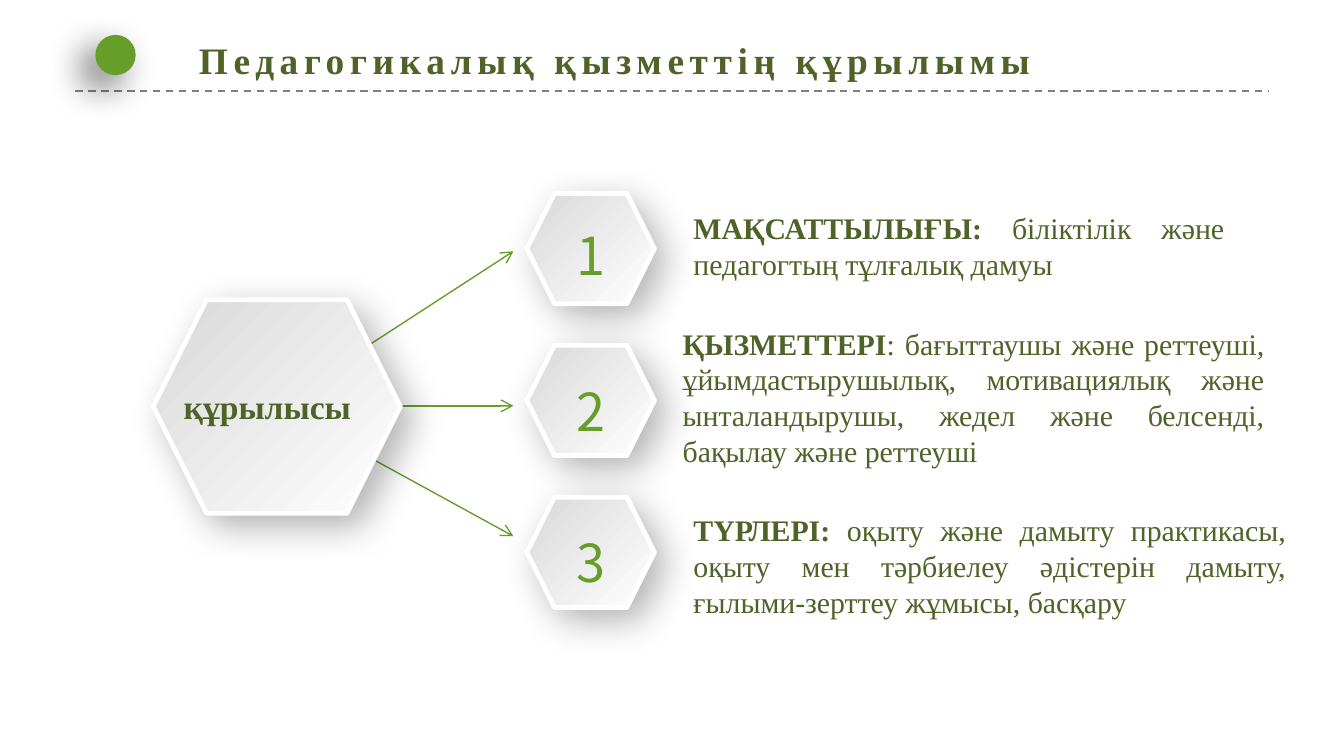
from lxml import etree
from pptx import Presentation, util as u
from pptx.dml.color import RGBColor
from pptx.enum import dml, shapes, text
from pptx.oxml.ns import qn

GREEN = RGBColor(0x67, 0x9E, 0x2A)
OLIVE = RGBColor(0x4F, 0x62, 0x28)
GRAY = RGBColor(0x80, 0x80, 0x80)
SILVER = RGBColor(0xD9, 0xD9, 0xD9)
WHITE = RGBColor(0xFF, 0xFF, 0xFF)
SERIF, SANS = "Times New Roman", "Noto Sans CJK SC"

# Content
TITLE = "Педагогикалық қызметтің құрылымы"
HUB = "құрылысы"
# heading, body, text box (left, top, width, height), digit offset, arrow end
ITEMS = [
    ("МАҚСАТТЫЛЫҒЫ: ", "біліктілік және педагогтың тұлғалық дамуы",
     (5.16, 1.56, 3.95, 0.54), 0.03, 1.87),
    ("ҚЫЗМЕТТЕРІ", ": бағыттаушы және реттеуші, ұйымдастырушылық, "
     "мотивациялық және ынталандырушы, жедел және белсенді, "
     "бақылау және реттеуші",
     (5.08, 2.42, 4.33, 1.08), 0.06, 3.02),
    ("ТҮРЛЕРІ: ", "оқыту және дамыту практикасы, оқыту мен тәрбиелеу "
     "әдістерін дамыту, ғылыми-зерттеу жұмысы, басқару",
     (5.16, 3.81, 4.41, 0.81), 0.06, 3.99),
]

# Layout, in inches
HUB_BOX = (1.14, 2.23, 1.84, 1.59)
HUB_CENTER = (2.05, 3.02)
ARROW_END = 3.82
STEP_LEFT, STEP_TOP, STEP_PITCH = 3.92, 1.44, 1.13
STEP_SIZE = (0.95, 0.82)

# A 16:9 page
deck = Presentation()
deck.slide_width = u.Inches(10)
deck.slide_height = deck.slide_width * 9 // 16
page = deck.slides.add_slide(deck.slide_layouts[5])


def inches(*values):
    return [u.Inches(value) for value in values]


def write(box, spans, size, font=SERIF, color=OLIVE, align=text.PP_ALIGN.LEFT,
          spacing=1.0, wrap=True, margin=None, tracking=None):
    """Fill a box with one paragraph made of (text, bold) spans."""
    frame = box.text_frame
    frame.auto_size = text.MSO_AUTO_SIZE.NONE
    frame.word_wrap = wrap
    frame.vertical_anchor = text.MSO_ANCHOR.TOP
    if margin is not None:
        frame.margin_left = frame.margin_right = u.Inches(margin)
        frame.margin_top = frame.margin_bottom = u.Inches(margin)
    para = frame.paragraphs[0]
    para.alignment, para.line_spacing = align, spacing
    for words, bold in spans:
        span = para.add_run()
        span.text = words
        span.font.name, span.font.size = font, u.Pt(size)
        span.font.bold, span.font.color.rgb = bold, color
        properties = span.font._element
        if tracking:
            properties.set("spc", str(tracking * 100))
        for tag in ("a:ea", "a:cs"):
            etree.SubElement(properties, qn(tag), typeface=font)


def text_box(place, spans, size, **style):
    write(page.shapes.add_textbox(*inches(*place)), spans, size, **style)


def add_shadow(shape, opacity, blur, distance, angle):
    shape.shadow.inherit = False
    effects = shape._element.spPr.find(qn("a:effectLst"))
    outer = etree.SubElement(
        effects, qn("a:outerShdw"), blurRad=str(u.Pt(blur)),
        dist=str(u.Pt(distance)), dir=str(angle * 60000),
        algn="ctr", rotWithShape="0")
    black = etree.SubElement(outer, qn("a:srgbClr"), val="000000")
    etree.SubElement(black, qn("a:alpha"), val=str(opacity * 1000))


def add_line(start, end, color, width, dash=None, arrow=False):
    line = page.shapes.add_connector(shapes.MSO_CONNECTOR.STRAIGHT,
                                     *inches(*start, *end))
    line.line.color.rgb, line.line.width = color, u.Pt(width)
    if dash:
        line.line.dash_style = dash
    if arrow:
        etree.SubElement(line.line._get_or_add_ln(), qn("a:tailEnd"),
                         type="arrow")
    etree.SubElement(line._element.spPr, qn("a:effectLst"))


def add_hexagon(place):
    hexagon = page.shapes.add_shape(shapes.MSO_SHAPE.HEXAGON, *inches(*place))
    hexagon.fill.gradient()
    hexagon.fill.gradient_angle = 315
    for stop, color in zip(hexagon.fill.gradient_stops, (SILVER, WHITE)):
        stop.color.rgb = color
    hexagon.line.color.rgb, hexagon.line.width = WHITE, u.Pt(2.5)
    add_shadow(hexagon, opacity=30, blur=20, distance=8, angle=45)


# Header: rule, dot and title
add_line((0.56, 0.68), (9.44, 0.68), GRAY, 1, dash=dml.MSO_LINE.DASH)
dot = page.shapes.add_shape(shapes.MSO_SHAPE.OVAL,
                            *inches(0.71, 0.26, 0.3, 0.3))
dot.fill.solid()
dot.fill.fore_color.rgb = GREEN
dot.line.fill.background()
add_shadow(dot, opacity=60, blur=20, distance=10, angle=135)
title = page.shapes.title
title.left, title.top, title.width, title.height = inches(
    1.38, 0.23, 7.87, 0.44)
write(title, [(TITLE, True)], 20, tracking=3)

# Arrows run out from behind the hub
for *_, arrow_y in ITEMS:
    add_line(HUB_CENTER, (ARROW_END, arrow_y), GREEN, 0.75, arrow=True)
add_hexagon(HUB_BOX)
text_box((1.26, 2.73, 1.46, 0.46), [(HUB, True)], 18,
         align=text.PP_ALIGN.CENTER, spacing=1.3, wrap=False)

# Numbered hexagons with their descriptions
for row, (heading, body, place, offset, _) in enumerate(ITEMS):
    top = STEP_TOP + row * STEP_PITCH
    add_hexagon((STEP_LEFT, top, *STEP_SIZE))
    text_box((STEP_LEFT + 0.26, top + offset, 0.43, 0.65),
             [(str(row + 1), False)], 28, font=SANS, color=GREEN,
             align=text.PP_ALIGN.CENTER, spacing=1.3, wrap=False)
    text_box(place, [(heading, True), (body, False)], 16,
             align=text.PP_ALIGN.JUSTIFY, margin=0)

deck.save("out.pptx")
